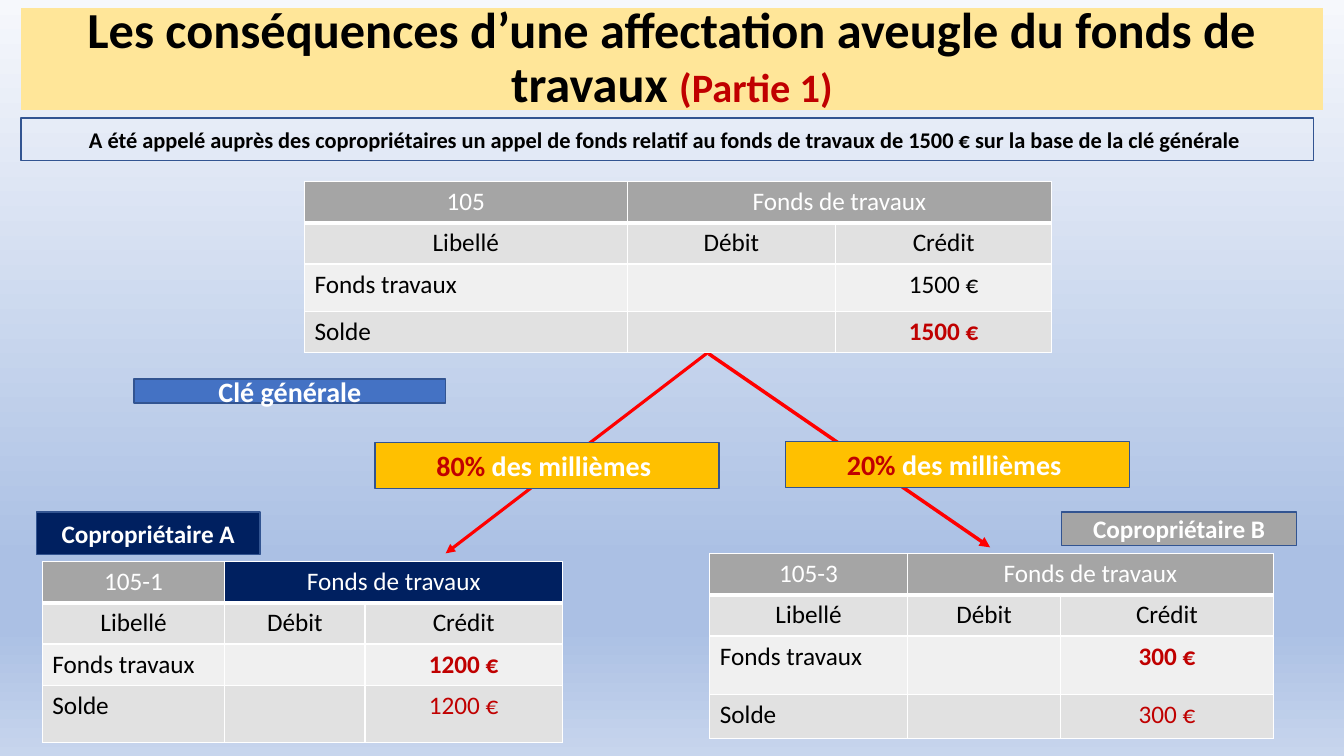
from lxml import etree
from pptx import Presentation
from pptx.dml.color import RGBColor
from pptx.enum.shapes import MSO_CONNECTOR, MSO_SHAPE
from pptx.enum.text import MSO_ANCHOR, MSO_AUTO_SIZE, PP_ALIGN
from pptx.oxml.ns import qn
from pptx.util import Pt

EMU_PER_PX = 9144
FONT = "Calibri"
CENTER, LEFT = PP_ALIGN.CENTER, PP_ALIGN.LEFT
MIDDLE = MSO_ANCHOR.MIDDLE
NO_AUTOFIT = MSO_AUTO_SIZE.NONE
RECTANGLE = MSO_SHAPE.RECTANGLE
STRAIGHT = MSO_CONNECTOR.STRAIGHT
TITLE_ONLY = 5

BLACK, WHITE, RED, ARROW_RED = "000000", "FFFFFF", "C00000", "FF0000"
GREY, NAVY, GOLD, BLUE, OUTLINE = "A5A5A5", "002060", "FFC000", "4472C4", "325491"
PALE_YELLOW, DARK_ROW, LIGHT_ROW = "FFE699", "E1E1E1", "F0F0F0"
BACKGROUND_STOPS = [(0, "F6F8FC"), (74, "ABC0E4"), (83, "ABC0E4"), (100, "C7D5ED")]

PLAIN = {"color": BLACK, "bold": False}
RED_PLAIN = {"color": RED, "bold": False}
RED_BOLD = {"color": RED, "bold": True}
HEADER = {"color": WHITE, "bold": False}


def px(*lengths):
    return [length * EMU_PER_PX for length in lengths]


def rgb(hex_color):
    return RGBColor.from_string(hex_color)


def fill_solid(fill, hex_color):
    fill.solid()
    fill.fore_color.rgb = rgb(hex_color)


def add_color(parent, hex_color):
    etree.SubElement(parent, qn("a:srgbClr"), val=hex_color)


def write(frame, runs, align=CENTER, line_spacing=None):
    """Fill the first paragraph with (text, size, colour, bold) runs."""
    paragraph = frame.paragraphs[0]
    for name, value in {"alignment": align, "line_spacing": line_spacing}.items():
        setattr(paragraph, name, value)
    for text, size, color, bold in runs:
        run = paragraph.add_run()
        run.text = text
        for name, value in {"name": FONT, "size": Pt(size), "bold": bold}.items():
            setattr(run.font, name, value)
        run.font.color.rgb = rgb(color)


def paint_background(slide):
    fill = slide.background.fill
    fill.gradient()
    fill.gradient_angle = 270
    stops = slide.background._cSld.find(".//" + qn("a:gsLst"))
    for stop in list(stops):
        stops.remove(stop)
    for percent, color in BACKGROUND_STOPS:
        add_color(etree.SubElement(stops, qn("a:gs"), pos=str(percent * 1000)), color)


def place_title(slide, box, runs):
    title = slide.shapes.title
    for name, value in zip(("left", "top", "width", "height"), px(*box)):
        setattr(title, name, value)
    fill_solid(title.fill, PALE_YELLOW)
    frame = title.text_frame
    layout = {"auto_size": NO_AUTOFIT, "vertical_anchor": MIDDLE, "word_wrap": True}
    for name, value in layout.items():
        setattr(frame, name, value)
    write(frame, runs, line_spacing=0.9)


def add_label(slide, box, fill, runs):
    label = slide.shapes.add_shape(RECTANGLE, *px(*box))
    label.shadow.inherit = False
    if fill:
        fill_solid(label.fill, fill)
    else:
        label.fill.background()
    label.line.color.rgb = rgb(OUTLINE)
    label.line.width = Pt(1)
    label.text_frame.vertical_anchor = MIDDLE
    label.text_frame.word_wrap = True
    write(label.text_frame, runs)


def add_arrow(slide, start, end, width):
    arrow = slide.shapes.add_connector(STRAIGHT, *px(*start, *end))
    arrow.line.color.rgb = rgb(ARROW_RED)
    arrow.line.width = Pt(width)
    etree.SubElement(arrow.line._get_or_add_ln(), qn("a:tailEnd"), type="triangle")
    etree.SubElement(arrow._element.spPr, qn("a:effectLst"))


def border_cell(cell, bottom):
    properties = cell._tc.get_or_add_tcPr()
    for side, width in {"L": 1, "R": 1, "T": 1, "B": bottom}.items():
        line = etree.SubElement(properties, qn(f"a:ln{side}"), w=str(Pt(width)))
        add_color(etree.SubElement(line, qn("a:solidFill")), WHITE)


def add_account(slide, corner, widths, heights, number, amount, title_fill,
                credit_format, balance_format):
    """Add the ledger table of one account: two header rows, an entry and a balance."""
    rows = [
        [(number, HEADER), ("Fonds de travaux", HEADER), ("", HEADER)],
        [("Libellé", PLAIN), ("Débit", PLAIN), ("Crédit", PLAIN)],
        [("Fonds travaux", PLAIN), ("", PLAIN), (amount, credit_format)],
        [("Solde", PLAIN), ("", PLAIN), (amount, balance_format)],
    ]
    fills = [GREY, DARK_ROW, LIGHT_ROW, DARK_ROW]
    frame = slide.shapes.add_table(
        len(rows), len(widths), *px(*corner, sum(widths), sum(heights)))
    table = frame.table
    for column, width in zip(table.columns, px(*widths)):
        column.width = width
    for row, height in zip(table.rows, px(*heights)):
        row.height = height
    table.cell(0, 1).merge(table.cell(0, 2))
    for r, entries in enumerate(rows):
        for c, (text, style) in enumerate(entries):
            cell = table.cell(r, c)
            border_cell(cell, bottom=1 if r else 3)
            fill_solid(cell.fill, title_fill if r == 0 and c else fills[r])
            if text:
                write(cell.text_frame, [(text, 18, style["color"], style["bold"])],
                      LEFT if r > 1 and c == 0 else CENTER)


def main():
    presentation = Presentation()
    presentation.slide_width, presentation.slide_height = px(1333, 750)
    slide = presentation.slides.add_slide(presentation.slide_layouts[TITLE_ONLY])
    paint_background(slide)
    place_title(slide, (21, 8, 1291, 101), [
        ("Les conséquences d’une affectation aveugle du fonds de travaux ",
         36, BLACK, True),
        ("(Partie 1)", 28.8, RED, True)])

    add_arrow(slide, (703, 349), (442, 549), 2.25)
    add_arrow(slide, (703, 351), (982, 543), 2.5)

    add_account(slide, (302, 180), (320, 207, 214), (41, 41, 47, 41),
                "105", "1500 €", GREY, PLAIN, RED_BOLD)
    add_account(slide, (42, 557), (181, 139, 196), (41, 41, 41, 57),
                "105-1", "1200 €", NAVY, RED_BOLD, RED_PLAIN)
    add_account(slide, (704, 549), (196, 152, 211), (41, 41, 58, 44),
                "105-3", "300 €", GREY, RED_BOLD, RED_PLAIN)

    add_label(slide, (133, 376, 309, 24), BLUE, [("Clé générale", 20, WHITE, True)])
    for left, top, share in ((372, 439, "80%"), (779, 438, "20%")):
        add_label(slide, (left, top, 341, 46), GOLD,
                  [(share, 20, RED, True), (" des millièmes ", 20, WHITE, True)])
    for box, fill, owner in (((1053, 508, 233, 33), GREY, "B"),
                             ((36, 508, 222, 42), NAVY, "A")):
        add_label(slide, box, fill, [(f"Copropriétaire {owner}", 18, WHITE, True)])
    add_label(slide, (21, 117, 1282, 42), None, [
        ("A été appelé auprès des copropriétaires un appel de fonds relatif au fonds "
         "de travaux de 1500 € sur la base de la clé générale ", 16, BLACK, True)])
    presentation.save("out.pptx")


if __name__ == "__main__":
    main()
